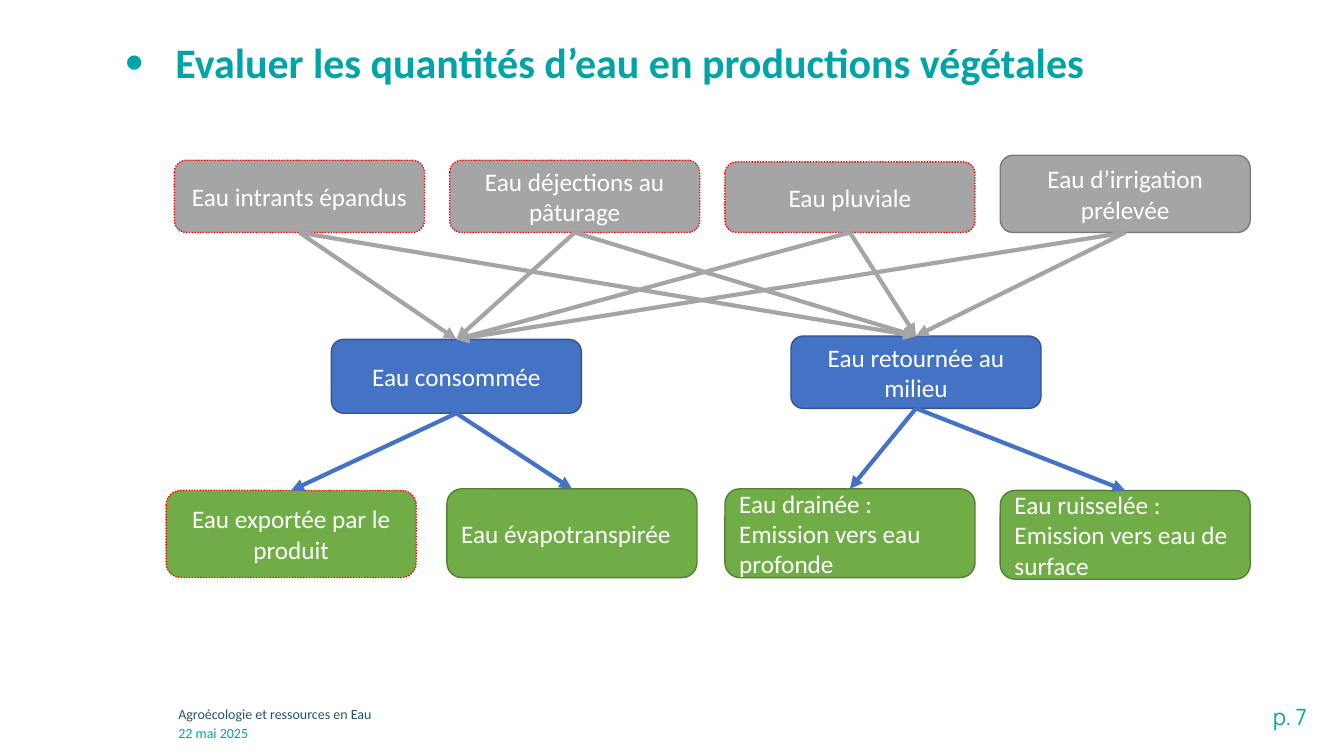
"""Build the slide on water quantities in crop production."""
from lxml import etree
from pptx import Presentation
from pptx.dml.color import RGBColor
from pptx.enum.dml import MSO_LINE_DASH_STYLE as Dash
from pptx.enum.shapes import MSO_CONNECTOR as Connector, MSO_SHAPE as Shape
from pptx.enum.text import MSO_ANCHOR as Anchor, PP_ALIGN as Align
from pptx.oxml.ns import qn
from pptx.util import Inches, Pt

COLORS = {
    "teal": "00A3A6", "slate": "275662", "white": "FFFFFF", "red": "FF0000",
    "gray": "A5A5A5", "gray_edge": "7A7A7A",
    "blue": "4472C4", "blue_edge": "325491",
    "green": "70AD47", "green_edge": "538035",
}
WIDTH, HEIGHT = 13.33, 7.5
GRID_LEFT, GRID_TOP = 1.73, 1.59
COLUMN, ROW = 2.73, 1.63
BOX_WIDTH = 2.48
TOP, BOTTOM = 0, 2

INPUTS = [
    ("Eau intrants épandus", 0, 0, 0.44, True),
    ("Eau déjections au pâturage", 1, 0, 0.44, True),
    ("Eau pluviale", 2, 0.01, 0.43, True),
    ("Eau d’irrigation prélevée", 3, -0.03, 0.47, False),
]
FLOWS = [
    ("Eau consommée", 0.57, 1.09, 0.45, False),
    ("Eau retournée au milieu", 2.24, 1.07, 0.44, False),
]
OUTPUTS = [
    ("Eau exportée par le produit", -0.03, 2.01, 0.53, True),
    ("Eau évapotranspirée", 0.99, 2, 0.54, False),
    ("Eau drainée :\vEmission vers eau profonde", 2, 2, 0.54, False),
    ("Eau ruisselée :\vEmission vers eau de surface", 3, 2.01, 0.54, False),
]


def rgb(name):
    """Return the named colour."""
    return RGBColor.from_string(COLORS[name])


def style_text(paragraph, size, color, font="Calibri", bold=False):
    """Format every run of a paragraph."""
    for run in paragraph.runs:
        run.font.name, run.font.size, run.font.bold = font, Pt(size), bold
        run.font.color.rgb = rgb(color)


def add_label(slide, text, area, size, color, font="Calibri", align=Align.LEFT, bold=False):
    """Add a text box whose area is given in percent of the slide."""
    left, top, width, height = area
    label = slide.shapes.add_textbox(
        Inches(WIDTH * left / 100), Inches(HEIGHT * top / 100),
        Inches(WIDTH * width / 100), Inches(HEIGHT * height / 100))
    frame = label.text_frame
    frame.text, frame.word_wrap = text, True
    frame.paragraphs[0].alignment = align
    style_text(frame.paragraphs[0], size, color, font, bold)
    return frame


def add_title(slide, text):
    """Add the bulleted title."""
    frame = add_label(slide, text, (9.3, 2.13, 83.8, 12.93), 30, "teal", bold=True)
    frame.margin_left, frame.vertical_anchor = 0, Anchor.MIDDLE
    paragraph = frame.paragraphs[0]
    paragraph.line_spacing = 0.9
    props = paragraph._p.get_or_add_pPr()
    props.set("marL", str(Inches(0.5)))
    props.set("indent", str(-Inches(0.5)))
    for tag, key, value in (("a:buSzPct", "val", "125000"),
                            ("a:buFont", "typeface", "Arial"),
                            ("a:buChar", "char", "•")):
        etree.SubElement(props, qn(tag)).set(key, value)


def add_box(slide, box, color, align):
    """Add one rounded box placed by grid column and row."""
    text, column, row, rows, dotted = box
    shape = slide.shapes.add_shape(
        Shape.ROUNDED_RECTANGLE,
        Inches(GRID_LEFT + column * COLUMN), Inches(GRID_TOP + row * ROW),
        Inches(BOX_WIDTH), Inches(rows * ROW))
    shape.shadow.inherit = False
    shape.fill.solid()
    shape.fill.fore_color.rgb = rgb(color)
    shape.line.width = Pt(1)
    shape.line.color.rgb = rgb("red" if dotted else f"{color}_edge")
    if dotted:
        shape.line.dash_style = Dash.ROUND_DOT
    frame = shape.text_frame
    frame.word_wrap, frame.vertical_anchor = True, Anchor.MIDDLE
    paragraph = frame.paragraphs[0]
    paragraph.text, paragraph.alignment = text, align
    style_text(paragraph, 18, "white")
    return shape


def add_arrow(slide, source, target, color):
    """Join the bottom of one box to the top of another."""
    arrow = slide.shapes.add_connector(Connector.STRAIGHT, 0, 0, 0, 0)
    arrow.begin_connect(source, BOTTOM)
    arrow.end_connect(target, TOP)
    arrow.line.width = Pt(3)
    arrow.line.color.rgb = rgb(color)
    etree.SubElement(arrow.line._get_or_add_ln(), qn("a:tailEnd")).set("type", "triangle")
    etree.SubElement(arrow._element.spPr, qn("a:effectLst"))


def main():
    """Build and save the slide."""
    deck = Presentation()
    deck.slide_width, deck.slide_height = Inches(WIDTH), Inches(HEIGHT)
    slide = deck.slides.add_slide(deck.slide_layouts[6])

    add_label(slide, "p. 7", (75.1, 92.4, 22.88, 4.93), 16, "teal", "Manrope", Align.RIGHT)
    add_label(slide, "Agroécologie et ressources en Eau", (12.53, 92.67, 73.44, 3.73), 10, "slate")
    add_label(slide, "22 mai 2025", (12.53, 95.2, 73.44, 3.73), 10, "teal")
    add_title(slide, "Evaluer les quantités d’eau en productions végétales")

    inputs = [add_box(slide, box, "gray", Align.CENTER) for box in INPUTS]
    flows = [add_box(slide, box, "blue", Align.CENTER) for box in FLOWS]
    outputs = [add_box(slide, box, "green", Align.CENTER if i == 0 else Align.LEFT)
               for i, box in enumerate(OUTPUTS)]

    for i, flow in enumerate(flows):
        for water_input in inputs:
            add_arrow(slide, water_input, flow, "gray")
        for output in outputs[2 * i:2 * i + 2]:
            add_arrow(slide, flow, output, "blue")

    deck.save("out.pptx")


if __name__ == "__main__":
    main()
